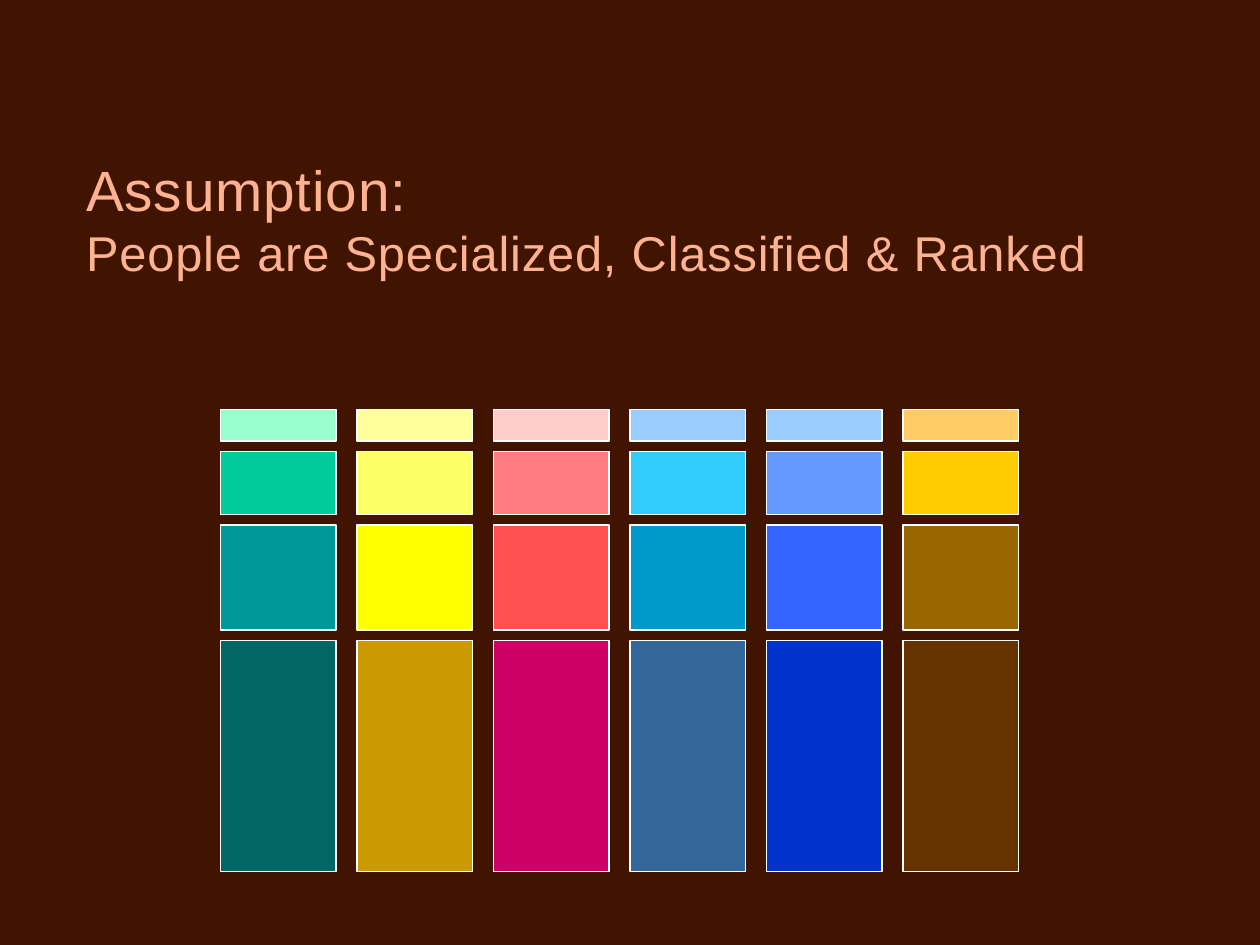
from dataclasses import dataclass

from pptx import Presentation
from pptx import util as u
from pptx.dml.color import RGBColor
from pptx.enum import shapes, text

PX = u.Inches(1) // 120


@dataclass(frozen=True)
class Theme:
    background: str = "411401"
    title: str = "FDB292"
    outline: str = "FFFFFF"
    font: str = "Arial"
    heading_size: float = 32.4
    subheading_size: float = 27.9
    spacing: int = 50
    line_width: float = 0.75


class Deck:
    def __init__(self, prs, theme):
        self.theme = theme
        self.slide = prs.slides.add_slide(prs.slide_layouts[5])
        fill = self.slide.background.fill
        fill.solid()
        fill.fore_color.rgb = RGBColor.from_string(theme.background)

    def title(self, x, y, w, h, top_inset, lines):
        sp = self.slide.shapes.title
        sp.left, sp.top, sp.width, sp.height = (v * PX for v in (x, y, w, h))
        tf = sp.text_frame
        tf.word_wrap = True
        tf.auto_size = text.MSO_AUTO_SIZE.NONE
        tf.vertical_anchor = text.MSO_ANCHOR.TOP
        tf.margin_top = top_inset * PX
        tf.text = "\n".join(line for line, _ in lines)
        for p, (_, size) in zip(tf.paragraphs, lines):
            p.alignment = text.PP_ALIGN.LEFT
            p.font.name = self.theme.font
            p.font.size = u.Pt(size)
            p.font.color.rgb = RGBColor.from_string(self.theme.title)
            for r in p.runs:
                r._r.get_or_add_rPr().set("spc", str(self.theme.spacing))

    def block(self, x, y, w, h, color):
        sp = self.slide.shapes.add_shape(
            shapes.MSO_SHAPE.RECTANGLE, x * PX, y * PX, w * PX, h * PX)
        sp.shadow.inherit = False
        sp.fill.solid()
        sp.fill.fore_color.rgb = RGBColor.from_string(color)
        sp.line.color.rgb = RGBColor.from_string(self.theme.outline)
        sp.line.width = u.Pt(self.theme.line_width)


RANKS = [
    (30, "99FFCC FFFF99 FFCCCC 99CCFF 99CCFF FFCC66"),
    (60, "00CC99 FFFF66 FF7C80 33CCFF 6699FF FFCC00"),
    (100, "009999 FFFF00 FF5050 0099CC 3366FF 996600"),
    (220, "006666 CC9900 CC0066 336699 0033CC 663300"),
]
LEFT, TOP = 210, 390
BLOCK_WIDTH, COLUMN_GAP, ROW_GAP = 110, 20, 10


def main():
    prs = Presentation()
    prs.slide_width, prs.slide_height = 1200 * PX, 900 * PX
    theme = Theme()
    deck = Deck(prs, theme)
    deck.title(70, 110, 1130, 150, 37, [
        ("Assumption:", theme.heading_size),
        ("People are Specialized, Classified & Ranked", theme.subheading_size),
    ])
    y = TOP
    for height, colors in RANKS:
        for column, color in enumerate(colors.split()):
            x = LEFT + column * (BLOCK_WIDTH + COLUMN_GAP)
            deck.block(x, y, BLOCK_WIDTH, height, color)
        y += height + ROW_GAP
    prs.save("out.pptx")


if __name__ == "__main__":
    main()
